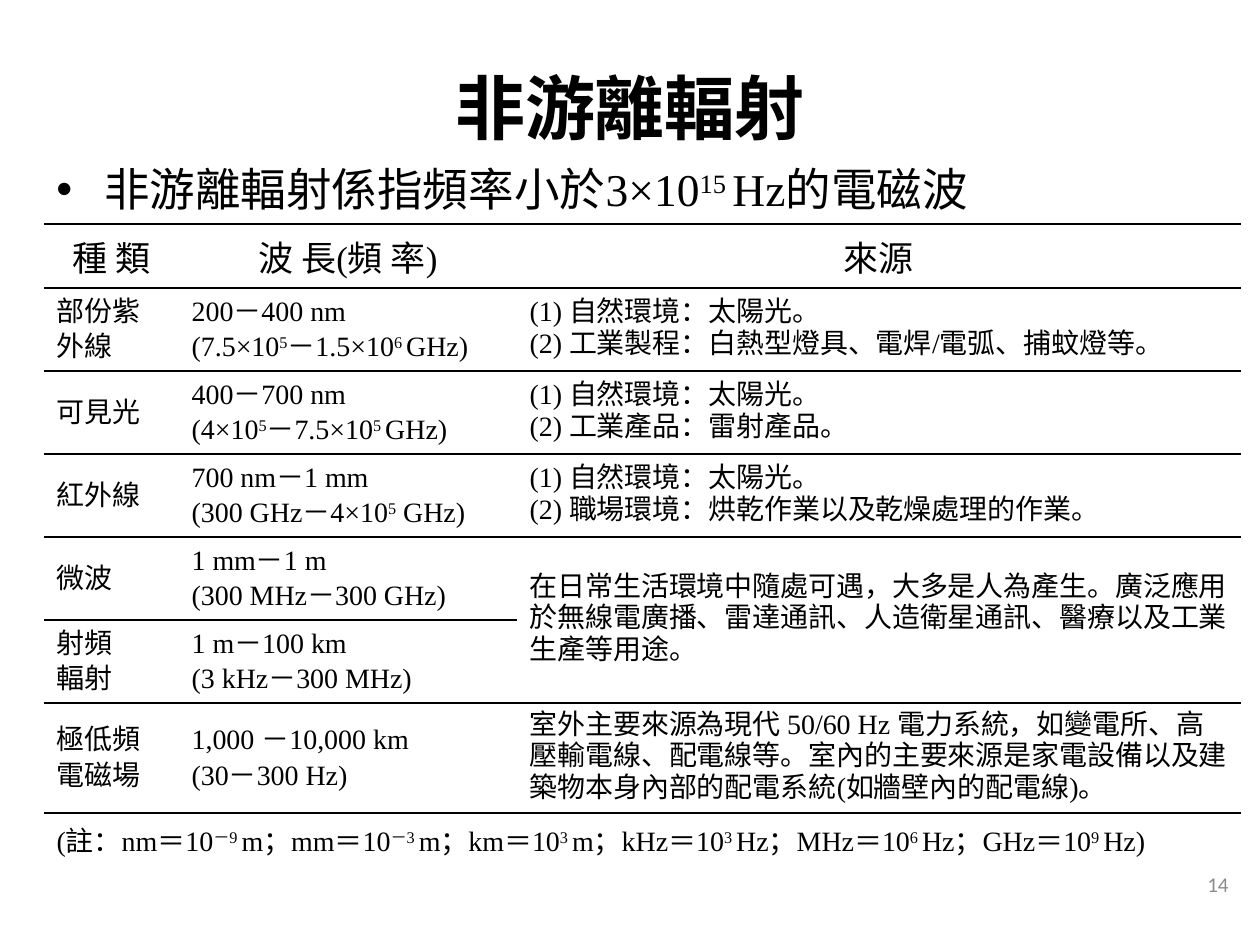
import pptx
import pptx.dml.color
import pptx.enum.text
import pptx.oxml.ns
import pptx.util
from lxml import etree

PX = 914400 / 126
ALIGN = pptx.enum.text.PP_ALIGN
ANCHOR = pptx.enum.text.MSO_ANCHOR
CJK = "Noto Sans CJK SC"

HEADINGS = ["種 類", "波 長(頻 率)", "來源"]
DAILY = ("在日常生活環境中隨處可遇，大多是人為產生。廣泛應用於無線電廣播、"
         "雷達通訊、人造衛星通訊、醫療以及工業生產等用途。")
POWER = ("室外主要來源為現代 50/60 Hz 電力系統，如變電所、高壓輸電線、配電線等。"
         "室內的主要來源是家電設備以及建築物本身內部的配電系統(如牆壁內的配電線)。")
SUN = "(1) 自然環境：太陽光。\n"
BANDS = [
    ["部份紫外線", "200－400 nm\n(7.5×10^5^－1.5×10^6 ^GHz)",
     SUN + "(2) 工業製程：白熱型燈具、電焊/電弧、捕蚊燈等。"],
    ["可見光", "400－700 nm\n(4×10^5^－7.5×10^5 ^GHz)",
     SUN + "(2) 工業產品：雷射產品。"],
    ["紅外線", "700 nm－1 mm\n(300 GHz－4×10^5^ GHz)",
     SUN + "(2) 職場環境：烘乾作業以及乾燥處理的作業。"],
    ["微波", "1 mm－1 m\n(300 MHz－300 GHz)", DAILY],
    ["射頻\n輻射", "1 m－100 km\n(3 kHz－300 MHz)", ""],
    ["極低頻電磁場", "1,000 －10,000 km\n(30－300 Hz)", POWER],
]
NOTE = ("(註：nm＝10^－9 ^m；mm＝10^－3 ^m；km＝10^3 ^m；"
        "kHz＝10^3 ^Hz；MHz＝10^6 ^Hz；GHz＝10^9 ^Hz)")


def px(n):
    return pptx.util.Emu(round(n * PX))


def rgb(color):
    return pptx.dml.color.RGBColor.from_string(color)


def add_xml(parent, tag, **attrs):
    return etree.SubElement(parent, pptx.oxml.ns.qn(tag), attrs)


def write(tf, text, size=16, font="Times New Roman", color="000000", bold=False,
          align=ALIGN.LEFT, leading=None, bullet=None, indent=0):
    """Fill a frame: newlines part paragraphs, ^...^ marks superscript."""
    for i, line in enumerate(text.split("\n")):
        p = tf.add_paragraph() if i else tf.paragraphs[0]
        p.alignment = align
        if leading:
            p.line_spacing = pptx.util.Pt(leading)
        if bullet:
            pPr = p._p.get_or_add_pPr()
            pPr.set("marL", str(px(indent)))
            pPr.set("indent", str(-px(indent)))
            add_xml(pPr, "a:buFont", typeface="Arial")
            add_xml(pPr, "a:buChar", char=bullet)
        for j, part in enumerate(line.split("^")):
            if not part:
                continue
            r = p.add_run()
            r.text = part
            r.font.size = pptx.util.Pt(size)
            r.font.bold = bold
            r.font.name = font
            r.font.color.rgb = rgb(color)
            rPr = r._r.get_or_add_rPr()
            add_xml(rPr, "a:ea", typeface=CJK)
            if j % 2:
                rPr.set("baseline", "30000")


def set_borders(cell, top=False, bottom=False):
    tcPr = cell._tc.get_or_add_tcPr()
    for tag, shown in (("a:lnL", False), ("a:lnR", False),
                       ("a:lnT", top), ("a:lnB", bottom)):
        ln = add_xml(tcPr, tag, w=str(pptx.util.Pt(1)))
        if shown:
            add_xml(add_xml(ln, "a:solidFill"), "a:srgbClr", val="000000")
        else:
            add_xml(ln, "a:noFill")


class Deck:
    def __init__(self, width, height):
        self.prs = pptx.Presentation()
        self.prs.slide_width, self.prs.slide_height = px(width), px(height)
        self.s = self.prs.slides.add_slide(self.prs.slide_layouts[6])

    def text(self, x, y, w, h, text, anchor=ANCHOR.MIDDLE, **style):
        tf = self.s.shapes.add_textbox(px(x), px(y), px(w), px(h)).text_frame
        tf.word_wrap = True
        tf.vertical_anchor = anchor
        write(tf, text, **style)

    def table(self, x, y, widths, heights):
        """Add a plain, unfilled table."""
        table = self.s.shapes.add_table(
            len(heights), len(widths), px(x), px(y),
            px(sum(widths)), px(sum(heights))).table
        table.first_row = table.horz_banding = False
        for col, w in zip(table.columns, widths):
            col.width = px(w)
        for row, h in zip(table.rows, heights):
            row.height = px(h)
        return table


def add_radiation_table(deck):
    table = deck.table(44, 224, [135, 338, 724], [64] + [83] * 5 + [110, 94])
    microwave, radio, last = 4, 5, 7
    table.cell(microwave, 2).merge(table.cell(radio, 2))
    table.cell(last, 0).merge(table.cell(last, 2))
    for i, row in enumerate([HEADINGS] + BANDS + [[NOTE, "", ""]]):
        for j, text in enumerate(row):
            cell = table.cell(i, j)
            inside_merge = j == 2
            set_borders(cell,
                        top=not (inside_merge and i == radio),
                        bottom=i < last and not (inside_merge and i == microwave))
            cell.fill.background()
            cell.vertical_anchor = ANCHOR.TOP if i == last else ANCHOR.MIDDLE
            if i == 0:
                style = dict(size=20, align=ALIGN.CENTER)
            elif i == last:
                style = {}
            else:
                style = dict(leading=18 if j == 2 else 20)
            if text:
                write(cell.text_frame, text, **style)


def main():
    deck = Deck(1260, 945)
    deck.text(63, 28, 1134, 157, "非游離輻射", size=40, font=CJK, bold=True,
              align=ALIGN.CENTER)
    deck.text(44, 155, 1121, 73, "非游離輻射係指頻率小於3×10^15 ^Hz的電磁波",
              anchor=ANCHOR.TOP, size=26, bullet="•", indent=48)
    add_radiation_table(deck)
    deck.text(948, 859, 293, 50, "14", size=12, font="Calibri", color="8C8C8C",
              align=ALIGN.RIGHT)
    deck.prs.save("out.pptx")


if __name__ == "__main__":
    main()
